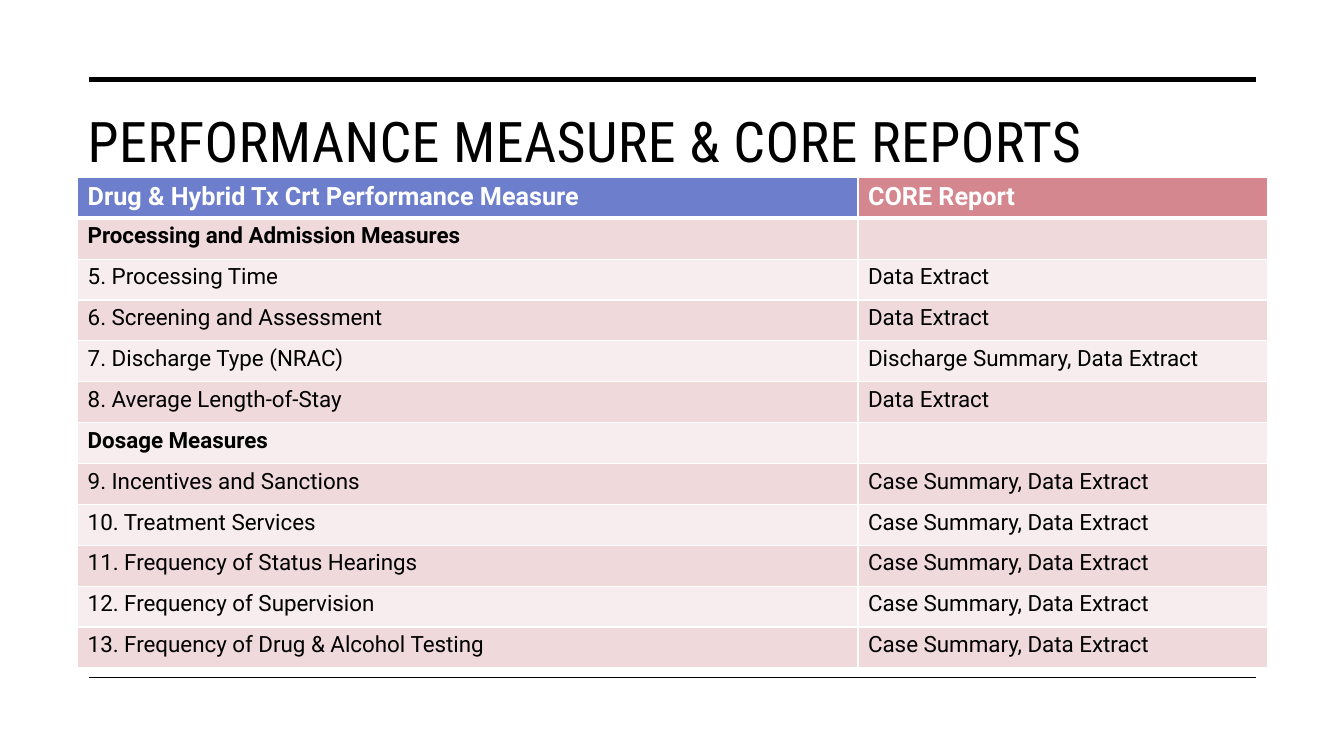
from dataclasses import dataclass

from pptx import Presentation
from pptx.dml.color import RGBColor
from pptx.enum.shapes import MSO_CONNECTOR
from pptx.enum.text import MSO_ANCHOR, MSO_AUTO_SIZE, PP_ALIGN
from pptx.oxml.ns import qn
from pptx.slide import Slide
from pptx.table import Table, _Cell as Cell
from pptx.text.text import Font
from pptx.util import Inches, Pt
from lxml.etree import SubElement

BLACK = RGBColor(0x00, 0x00, 0x00)
WHITE = RGBColor(0xFF, 0xFF, 0xFF)
BLUE = RGBColor(0x6C, 0x7E, 0xCC)
ROSE = RGBColor(0xD5, 0x87, 0x8F)
PINK = RGBColor(0xEF, 0xD9, 0xDB)
PALE = RGBColor(0xF7, 0xED, 0xEE)

SLIDE_W = Inches(13.33)
SLIDE_H = Inches(7.5)
LEFT = Inches(0.77)
TITLE_TOP = Inches(1.01)
TITLE_W = Inches(11.69)
TITLE_H = Inches(1.03)
TABLE_TOP = Inches(1.76)
TABLE_H = Inches(4.87)
COLUMN_WIDTHS = (Inches(7.74), Inches(4.06))
RULE_LEFT = Inches(0.88)
RULE_RIGHT = Inches(12.46)


@dataclass(frozen=True)
class Rule:
    y: float
    weight: float


@dataclass(frozen=True)
class Measure:
    name: str
    report: str = ""

    @property
    def is_heading(self) -> bool:
        return not self.report


RULES = (Rule(0.79, 3.5), Rule(6.72, 1))
EXTRACT = "Data Extract"
CASE = "Case Summary, Data Extract"
HEADER = Measure("Drug & Hybrid Tx Crt Performance Measure", "CORE Report")
MEASURES = (
    Measure("Processing and Admission Measures"),
    Measure("5. Processing Time", EXTRACT),
    Measure("6. Screening and Assessment", EXTRACT),
    Measure("7. Discharge Type (NRAC)", "Discharge Summary, Data Extract"),
    Measure("8. Average Length-of-Stay", EXTRACT),
    Measure("Dosage Measures"),
    Measure("9. Incentives and Sanctions", CASE),
    Measure("10. Treatment Services", CASE),
    Measure("11. Frequency of Status Hearings", CASE),
    Measure("12. Frequency of Supervision", CASE),
    Measure("13. Frequency of Drug & Alcohol Testing", CASE),
)


def style_font(font: Font, name: str, size: float, color: RGBColor, bold: bool = False) -> None:
    font.name = name
    font.size = Pt(size)
    font.color.rgb = color
    font.bold = bold


def add_rule(s: Slide, rule: Rule) -> None:
    y = Inches(rule.y)
    line = s.shapes.add_connector(MSO_CONNECTOR.STRAIGHT, RULE_LEFT, y, RULE_RIGHT, y)
    line.line.color.rgb = BLACK
    line.line.width = Pt(rule.weight)
    SubElement(line._element.spPr, qn("a:effectLst"))


def add_title(s: Slide, text: str) -> None:
    sp = s.shapes.title
    sp.left, sp.top, sp.width, sp.height = LEFT, TITLE_TOP, TITLE_W, TITLE_H
    tf = sp.text_frame
    tf.text = text
    tf.word_wrap = True
    tf.auto_size = MSO_AUTO_SIZE.NONE
    tf.vertical_anchor = MSO_ANCHOR.TOP
    p = tf.paragraphs[0]
    p.alignment = PP_ALIGN.LEFT
    r = p.runs[0]
    style_font(r.font, "Roboto Condensed", 40, BLACK)
    r.font._element.set("spc", "30")


def set_borders(cell: Cell, top: float, bottom: float) -> None:
    tc_pr = cell._tc.get_or_add_tcPr()
    for tag, weight in (("lnL", 1), ("lnR", 1), ("lnT", top), ("lnB", bottom)):
        ln = SubElement(tc_pr, qn(f"a:{tag}"), w=str(Pt(weight)))
        fill = SubElement(ln, qn("a:solidFill"))
        SubElement(fill, qn("a:srgbClr"), val=str(WHITE))


def fill_row(table: Table, row: int, measure: Measure) -> None:
    is_header = row == 0
    band = PINK if row % 2 else PALE
    fills = (BLUE, ROSE) if is_header else (band, band)
    for col, text in enumerate((measure.name, measure.report)):
        cell = table.cell(row, col)
        set_borders(cell, top=3 if row == 1 else 1, bottom=3 if is_header else 1)
        cell.fill.solid()
        cell.fill.fore_color.rgb = fills[col]
        cell.text_frame.text = text
        for r in cell.text_frame.paragraphs[0].runs:
            style_font(
                r.font,
                "Roboto",
                18 if is_header else 16,
                WHITE if is_header else BLACK,
                is_header or measure.is_heading,
            )


def add_measure_table(s: Slide) -> None:
    rows = (HEADER, *MEASURES)
    frame = s.shapes.add_table(
        len(rows), len(COLUMN_WIDTHS), LEFT, TABLE_TOP, sum(COLUMN_WIDTHS), TABLE_H
    )
    table = frame.table
    for column, width in zip(table.columns, COLUMN_WIDTHS):
        column.width = width
    for row, measure in enumerate(rows):
        fill_row(table, row, measure)


def main() -> None:
    prs = Presentation()
    prs.slide_width, prs.slide_height = SLIDE_W, SLIDE_H
    s = prs.slides.add_slide(prs.slide_layouts[5])
    for rule in RULES:
        add_rule(s, rule)
    add_title(s, "PERFORMANCE MEASURE & CORE REPORTS")
    add_measure_table(s)
    prs.save("out.pptx")


if __name__ == "__main__":
    main()
